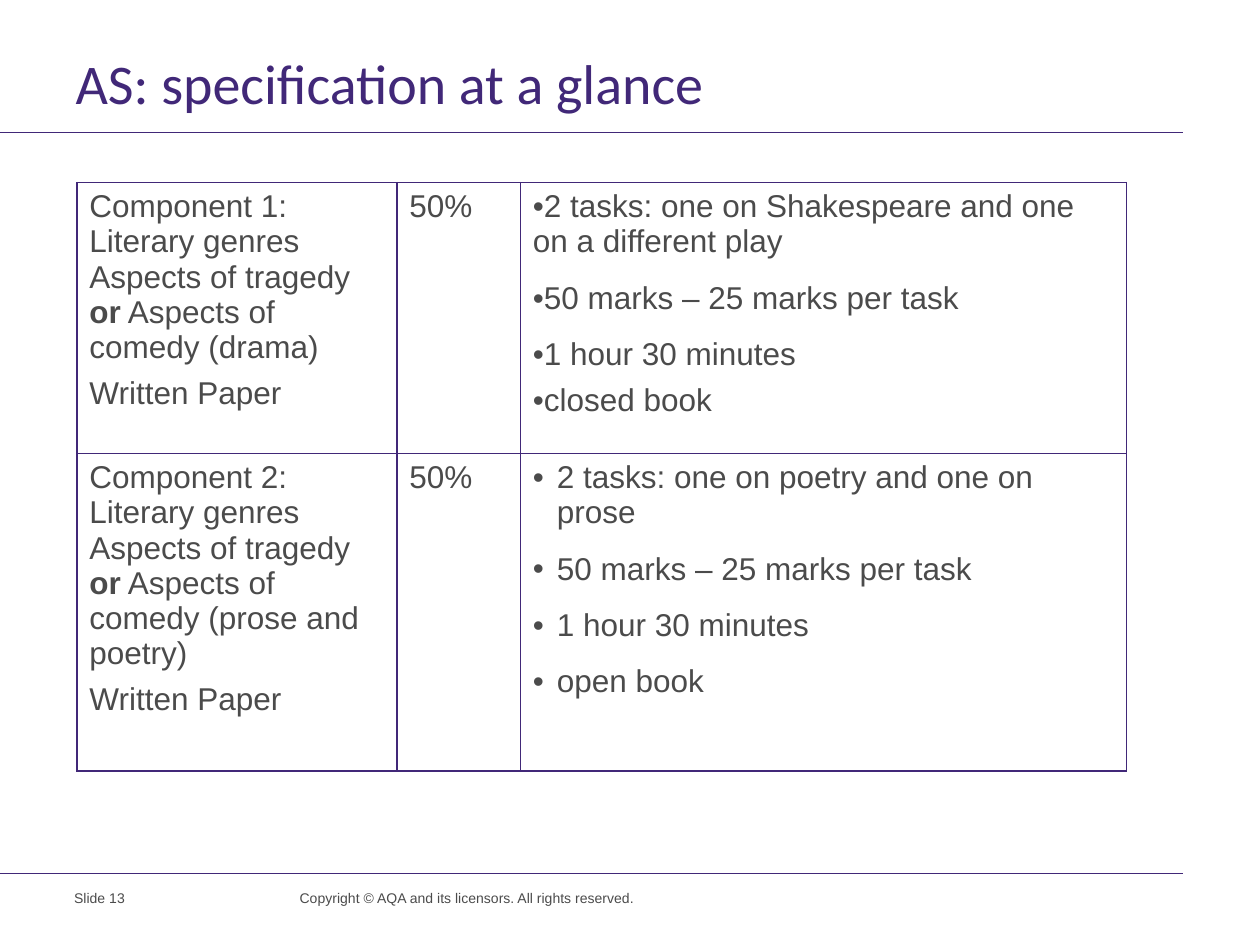
from lxml import etree
from pptx import Presentation
from pptx.dml.color import RGBColor
from pptx.enum import shapes, text
from pptx.oxml.ns import qn
from pptx.util import Inches, Pt

# Content
TITLE = "AS: specification at a glance"
FOOTERS = [  # text, left, width, height
    ("Copyright © AQA and its licensors. All rights reserved.", 2.28, 2.93, 0.26),
    ("Slide 13", 0.49, 1.56, 0.38),
]
COMPONENTS = [
    {"name": "Component 1:", "scope": "(drama)", "weight": "50%", "indent": 0,
     "tasks": ["2 tasks: one on Shakespeare and one on a different play",
               "50 marks – 25 marks per task", "1 hour 30 minutes", "closed book"],
     "after": [6, 6, 0, 0]},
    {"name": "Component 2:", "scope": "(prose and poetry)", "weight": "50%", "indent": 0.19,
     "tasks": ["2 tasks: one on poetry and one on prose",
               "50 marks – 25 marks per task", "1 hour 30 minutes", "open book"],
     "after": [6, 6, 6, 6]},
]

# Format
COLORS = {"purple": "412878", "gray": "4B4B4B"}
COLUMNS, ROWS = [2.54, 0.98, 4.81], [2.15, 2.52]
TABLE_LEFT, TABLE_TOP = 0.61, 1.45
RULES, RULE_END = [1.05, 6.93], 9.39
HANGING = 0.19


def color(name):
    return RGBColor.from_string(COLORS[name])


def add_run(paragraph, words, size, tint="gray", name="Arial", bold=False):
    run = paragraph.add_run()
    run.text = words
    for key, value in {"size": Pt(size), "name": name, "bold": bold}.items():
        setattr(run.font, key, value)
    run.font.color.rgb = color(tint)


def write_cell(cell, paragraphs):
    """Each paragraph is (runs, space before, space after, left indent or None)."""
    for i, (runs, before, after, indent) in enumerate(paragraphs):
        p = cell.text_frame.paragraphs[0] if i == 0 else cell.text_frame.add_paragraph()
        p.space_before, p.space_after = Pt(before if i else 0), Pt(after)
        if indent is not None:
            add_bullet(p, indent)
        for words, bold in runs:
            add_run(p, words, 18, bold=bold)


def add_bullet(paragraph, indent):
    pPr = paragraph._p.get_or_add_pPr()
    pPr.set("marL", str(Inches(indent)))
    pPr.set("indent", str(-Inches(HANGING)))
    tint = etree.SubElement(pPr, qn("a:buClr"))
    etree.SubElement(tint, qn("a:srgbClr"), val=COLORS["gray"])
    etree.SubElement(pPr, qn("a:buFont"), typeface="Arial")
    etree.SubElement(pPr, qn("a:buChar"), char="•")


def add_borders(cell):
    tcPr = cell._tc.get_or_add_tcPr()
    for i, side in enumerate(["a:lnL", "a:lnR", "a:lnT", "a:lnB"]):
        line = etree.Element(qn(side), w=str(Pt(1)))
        fill = etree.SubElement(line, qn("a:solidFill"))
        etree.SubElement(fill, qn("a:srgbClr"), val=COLORS["purple"])
        tcPr.insert(i, line)


prs = Presentation()
prs.slide_width, prs.slide_height = Inches(10), Inches(7.5)
slide = prs.slides.add_slide(prs.slide_layouts[5])

# Rules above and below the content
for y in RULES:
    rule = slide.shapes.add_connector(shapes.MSO_CONNECTOR.STRAIGHT,
                                      0, Inches(y), Inches(RULE_END), Inches(y))
    rule.line.color.rgb = color("purple")
    rule.line.width = Pt(0.6)
    etree.SubElement(rule._element.spPr, qn("a:effectLst"))

# Title
title = slide.shapes.title
for key, value in {"left": 0.5, "top": 0.44, "width": 9.5, "height": 0.48}.items():
    setattr(title, key, Inches(value))
frame = title.text_frame
for key, value in {"vertical_anchor": text.MSO_ANCHOR.BOTTOM, "margin_bottom": 0,
                   "word_wrap": True, "auto_size": text.MSO_AUTO_SIZE.NONE}.items():
    setattr(frame, key, value)
heading = frame.paragraphs[0]
heading.alignment = text.PP_ALIGN.LEFT
heading.line_spacing = Pt(28)
add_run(heading, TITLE, 32, "purple", "Calibri")

# Component table
table = slide.shapes.add_table(len(ROWS), len(COLUMNS), Inches(TABLE_LEFT), Inches(TABLE_TOP),
                               Inches(sum(COLUMNS)), Inches(sum(ROWS))).table
table.first_row = table.horz_banding = False
for column, width in zip(table.columns, COLUMNS):
    column.width = Inches(width)
for row, height, component in zip(table.rows, ROWS, COMPONENTS):
    row.height = Inches(height)
    aspects = [("Aspects of tragedy ", False), ("or", True),
               (f" Aspects of comedy {component['scope']}", False)]
    outline = [([(component["name"], False)], 0, 0, None),
               ([("Literary genres", False)], 0, 0, None),
               (aspects, 0, 6, None),
               ([("Written Paper", False)], 0, 0, None)]
    weight = [([(component["weight"], False)], 0, 0, None)]
    tasks = [([(task, False)], 6, after, component["indent"])
             for task, after in zip(component["tasks"], component["after"])]
    for cell, paragraphs in zip(row.cells, [outline, weight, tasks]):
        cell.fill.background()
        add_borders(cell)
        write_cell(cell, paragraphs)

# Footer
for words, left, width, height in FOOTERS:
    footer = slide.shapes.add_textbox(Inches(left), Inches(7.01), Inches(width), Inches(height))
    footer.text_frame.word_wrap = True
    add_run(footer.text_frame.paragraphs[0], words, 8)

prs.save("out.pptx")
